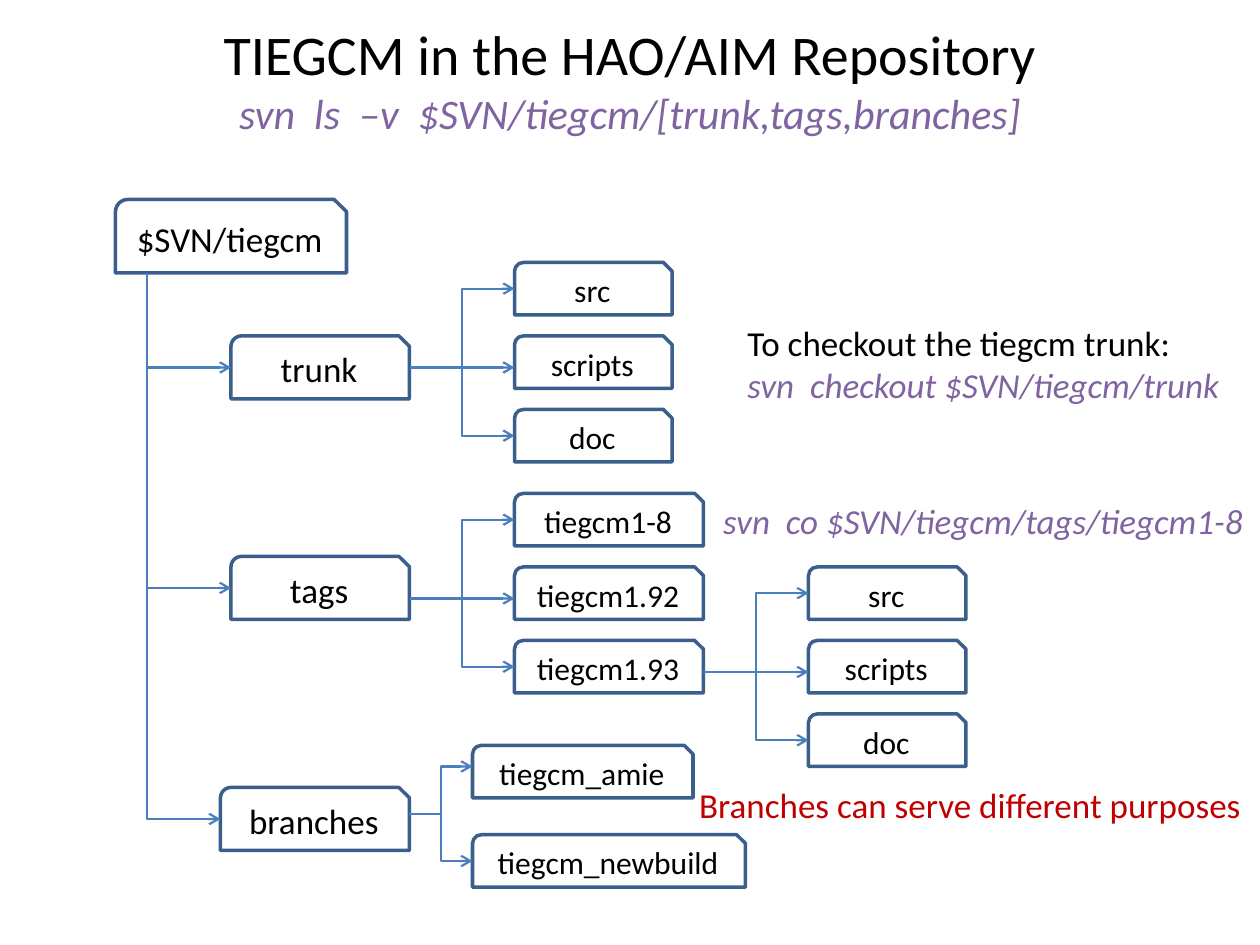
"""Build a slide showing the tree of a versioned repository and its checkout commands."""
from lxml import etree
from pptx import Presentation
from pptx.dml.color import RGBColor
from pptx.enum import shapes, text
from pptx.oxml import ns
from pptx.util import Pt

PX = 7620
COLORS = {
    "outline": "3A5F8C",
    "arrow": "4B7EBC",
    "label": "000000",
    "command": "8064A2",
    "warning": "C00000",
}


def style(span, size, color):
    span.font.name = "Calibri"
    span.font.size = Pt(size)
    span.font.color.rgb = RGBColor.from_string(COLORS[color])
    if color == "command":
        span.font.italic = True


def add_arrow(page, kind, start, end):
    line = page.shapes.add_connector(kind, *[value * PX for value in start + end])
    line.line.color.rgb = RGBColor.from_string(COLORS["arrow"])
    line.line.width = Pt(1.25)
    etree.SubElement(line.line._get_or_add_ln(), ns.qn("a:tailEnd"), type="arrow")
    etree.SubElement(line._element.spPr, ns.qn("a:effectLst"))
    return line


deck = Presentation()
deck.slide_width = 1200 * PX
deck.slide_height = 900 * PX
page = deck.slides.add_slide(deck.slide_layouts[6])

folders = [
    ("$SVN/tiegcm", 110, 190, 220, 70, 20),
    ("trunk", 220, 320, 170, 60, 20),
    ("tags", 220, 530, 170, 60, 20),
    ("branches", 210, 750, 180, 60, 20),
    ("tiegcm_amie", 450, 710, 210, 50, 18),
    ("tiegcm_newbuild", 450, 795, 260, 50, 18),
]
columns = [
    (490, 250, 150, ["src", "scripts", "doc"]),
    (490, 470, 180, ["tiegcm1-8", "tiegcm1.92", "tiegcm1.93"]),
    (770, 540, 150, ["src", "scripts", "doc"]),
]
for left, top, width, names in columns:
    for row, name in enumerate(names):
        folders.append((name, left, top + 70 * row, width, 50, 18))

for name, left, top, width, height, size in folders:
    box = page.shapes.add_shape(
        shapes.MSO_SHAPE.SNIP_ROUND_RECTANGLE, left * PX, top * PX, width * PX, height * PX
    )
    box.shadow.inherit = False
    box.fill.background()
    box.line.color.rgb = RGBColor.from_string(COLORS["outline"])
    box.line.width = Pt(2)
    box.text_frame.text = name
    box.text_frame.vertical_anchor = text.MSO_ANCHOR.MIDDLE
    para = box.text_frame.paragraphs[0]
    para.alignment = text.PP_ALIGN.CENTER
    style(para.runs[0], size, "label")

root_x, root_y = 140, 260
for end_x, end_y in [(220, 350), (220, 560), (210, 780)]:
    across, down = end_x - root_x, end_y - root_y
    left = root_x + (across - down) // 2
    top = root_y + (down - across) // 2
    arrow = add_arrow(
        page, shapes.MSO_CONNECTOR.ELBOW, (left, top), (left + down, top + across)
    )
    frame = arrow._element.spPr.find(ns.qn("a:xfrm"))
    frame.set("rot", "16200000")
    frame.set("flipH", "1")
    arrow._element.spPr.find(ns.qn("a:prstGeom")).set("prst", "bentConnector2")

forks = [
    (390, 350, 490, [0, 65, -75]),
    (390, 570, 490, [0, 65, -75]),
    (390, 775, 450, [-45, 45]),
    (670, 640, 770, [0, 65, -75]),
]
for start_x, start_y, end_x, offsets in forks:
    for offset in offsets:
        kind = shapes.MSO_CONNECTOR.ELBOW if offset else shapes.MSO_CONNECTOR.STRAIGHT
        add_arrow(page, kind, (start_x, start_y), (end_x, start_y + offset))

title = page.shapes.add_textbox(60 * PX, 0, 1080 * PX, 150 * PX)
title.text_frame.word_wrap = True
title.text_frame.vertical_anchor = text.MSO_ANCHOR.MIDDLE
title.text_frame.text = (
    "TIEGCM in the HAO/AIM Repository\vsvn  ls  –v  $SVN/tiegcm/[trunk,tags,branches]"
)
para = title.text_frame.paragraphs[0]
para.alignment = text.PP_ALIGN.CENTER
for span, size, color in zip(para.runs, [32, 24], ["label", "command"]):
    style(span, size, color)

notes = [
    (700, 300, 480, 92, True, [
        ("To checkout the tiegcm trunk:", "label"),
        ("svn  checkout $SVN/tiegcm/trunk", "command"),
    ]),
    (654, 740, 546, 53, False, [("Branches can serve different purposes", "warning")]),
    (677, 470, 523, 53, False, [("svn  co $SVN/tiegcm/tags/tiegcm1-8", "command")]),
]
for left, top, width, height, wrap, lines in notes:
    box = page.shapes.add_textbox(left * PX, top * PX, width * PX, height * PX)
    box.text_frame.word_wrap = wrap
    box.text_frame.auto_size = text.MSO_AUTO_SIZE.SHAPE_TO_FIT_TEXT
    box.text_frame.text = "\n".join(words for words, color in lines)
    for para, (words, color) in zip(box.text_frame.paragraphs, lines):
        style(para.runs[0], 20, color)

deck.save("out.pptx")
